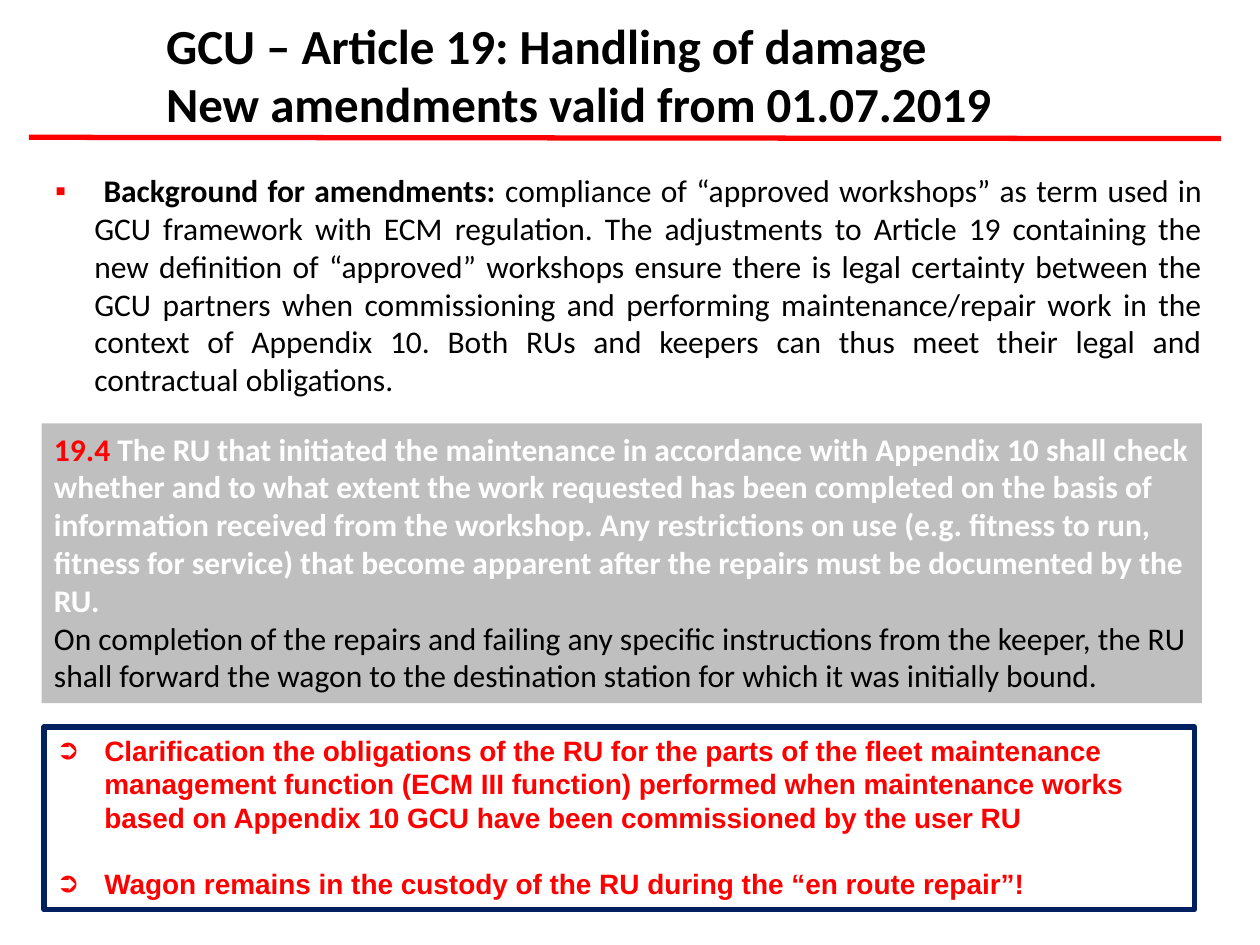
from dataclasses import dataclass
from typing import Optional

from lxml.etree import SubElement
from pptx import Presentation
from pptx.dml.color import RGBColor
from pptx.enum.shapes import MSO_CONNECTOR, MSO_SHAPE
from pptx.enum.text import MSO_ANCHOR, PP_ALIGN
from pptx.oxml.ns import qn
from pptx.util import Pt

EMU_PER_PX = 9144  # 100 px to the inch


@dataclass(frozen=True)
class Theme:
    red: str = "FF0000"
    black: str = "000000"
    white: str = "FFFFFF"
    grey: str = "BFBFBF"
    navy: str = "002060"
    text_font: str = "Calibri"
    conclusion_font: str = "Arial"
    title_size: int = 28
    body_size: int = 18
    conclusion_size: int = 16
    line_width: int = 3


THEME = Theme()


@dataclass(frozen=True)
class Run:
    text: str
    color: str = THEME.black
    bold: bool = False


@dataclass(frozen=True)
class Bullet:
    character: str
    indent: int
    color: str = THEME.red
    tab: Optional[int] = None


@dataclass(frozen=True)
class Box:
    left: int
    top: int
    width: int
    height: int
    fill: Optional[str] = None
    line: Optional[str] = None


TITLE = Box(122, 7, 792, 98)
BACKGROUND = Box(34, 131, 930, 192)
ARTICLE = Box(33, 336, 921, 222, fill=THEME.grey)
CONCLUSIONS = Box(35, 577, 913, 145, line=THEME.navy)


def px(length: int) -> int:
    return length * EMU_PER_PX


def add_bullet(paragraph, bullet: Bullet) -> None:
    properties = paragraph._p.get_or_add_pPr()
    properties.set("marL", str(px(bullet.indent)))
    properties.set("indent", str(-px(bullet.indent)))
    color = SubElement(properties, qn("a:buClr"))
    SubElement(color, qn("a:srgbClr"), val=bullet.color)
    SubElement(properties, qn("a:buFont"), typeface="Arial")
    SubElement(properties, qn("a:buChar"), char=bullet.character)
    if bullet.tab is not None:
        tabs = SubElement(properties, qn("a:tabLst"))
        SubElement(tabs, qn("a:tab"), pos=str(px(bullet.tab)), algn="l")


def add_box(slide, box: Box):
    """Add a rectangle, or a plain text box when it has no fill or line."""
    place = [px(length) for length in (box.left, box.top, box.width, box.height)]
    if box.fill is None and box.line is None:
        return slide.shapes.add_textbox(*place)
    shape = slide.shapes.add_shape(MSO_SHAPE.RECTANGLE, *place)
    shape.shadow.inherit = False
    if box.fill:
        shape.fill.solid()
        shape.fill.fore_color.rgb = RGBColor.from_string(box.fill)
    else:
        shape.fill.background()
    if box.line:
        shape.line.color.rgb = RGBColor.from_string(box.line)
        shape.line.width = Pt(THEME.line_width)
    else:
        shape.line.fill.background()
    return shape


def add_text(slide, box: Box, paragraphs: list[list[Run]], *, size: int,
             font: str = THEME.text_font, align=PP_ALIGN.LEFT,
             bullet: Optional[Bullet] = None, gap: float = 0) -> None:
    frame = add_box(slide, box).text_frame
    frame.word_wrap = True
    frame.vertical_anchor = MSO_ANCHOR.TOP
    for index, runs in enumerate(paragraphs):
        paragraph = frame.add_paragraph() if index else frame.paragraphs[0]
        paragraph.alignment = align
        if index and gap:
            paragraph.space_before = Pt(gap)
        if bullet:
            add_bullet(paragraph, bullet)
        for item in runs:
            run = paragraph.add_run()
            run.text = item.text
            run.font.name = font
            run.font.size = Pt(size)
            run.font.bold = item.bold
            run.font.color.rgb = RGBColor.from_string(item.color)


def add_title_rule(slide) -> None:
    rule = slide.shapes.add_connector(
        MSO_CONNECTOR.STRAIGHT, px(23), px(109), px(969), px(110))
    rule.line.color.rgb = RGBColor.from_string(THEME.red)
    rule.line.width = Pt(THEME.line_width)
    SubElement(rule._element.spPr, qn("a:effectLst"))


def main() -> None:
    presentation = Presentation()
    presentation.slide_width, presentation.slide_height = px(1000), px(750)
    slide = presentation.slides.add_slide(presentation.slide_layouts[6])

    add_title_rule(slide)
    add_text(slide, TITLE, [
        [Run("GCU – Article 19: Handling of damage", bold=True)],
        [Run("New amendments valid from 01.07.2019", bold=True)],
    ], size=THEME.title_size)
    add_text(slide, ARTICLE, [
        [Run("19.4 ", THEME.red, True),
         Run("The RU that initiated the maintenance in accordance with Appendix 10 "
             "shall check whether and to what extent the work requested has been "
             "completed on the basis of information received from the workshop. Any "
             "restrictions on use (e.g. fitness to run, fitness for service) that "
             "become apparent after the repairs must be documented by the RU.",
             THEME.white, True)],
        [Run("On completion of the repairs and failing any specific instructions from "
             "the keeper, the RU shall forward the wagon to the destination station "
             "for which it was initially bound.")],
    ], size=THEME.body_size)
    add_text(slide, BACKGROUND, [
        [Run(" Background for amendments: ", bold=True),
         Run("compliance of “approved workshops” as term used in GCU framework with "
             "ECM regulation. The adjustments to Article 19 containing the new "
             "definition of “approved” workshops ensure there is legal certainty "
             "between the GCU partners when commissioning and performing "
             "maintenance/repair work in the context of Appendix 10. Both RUs and "
             "keepers can thus meet their legal and contractual obligations.")],
    ], size=THEME.body_size, align=PP_ALIGN.JUSTIFY, bullet=Bullet("▪", 31, tab=373))
    add_text(slide, CONCLUSIONS, [
        [Run("Clarification the obligations of the RU for the parts of the fleet "
             "maintenance management function (ECM III function) performed when "
             "maintenance works based on Appendix 10 GCU have been commissioned by "
             "the user RU", THEME.red, True)],
        [Run("Wagon remains in the custody of the RU during the “en route repair”!",
             THEME.red, True)],
    ], size=THEME.conclusion_size, font=THEME.conclusion_font,
        bullet=Bullet("➲", 38), gap=18.4)

    presentation.save("out.pptx")


if __name__ == "__main__":
    main()
